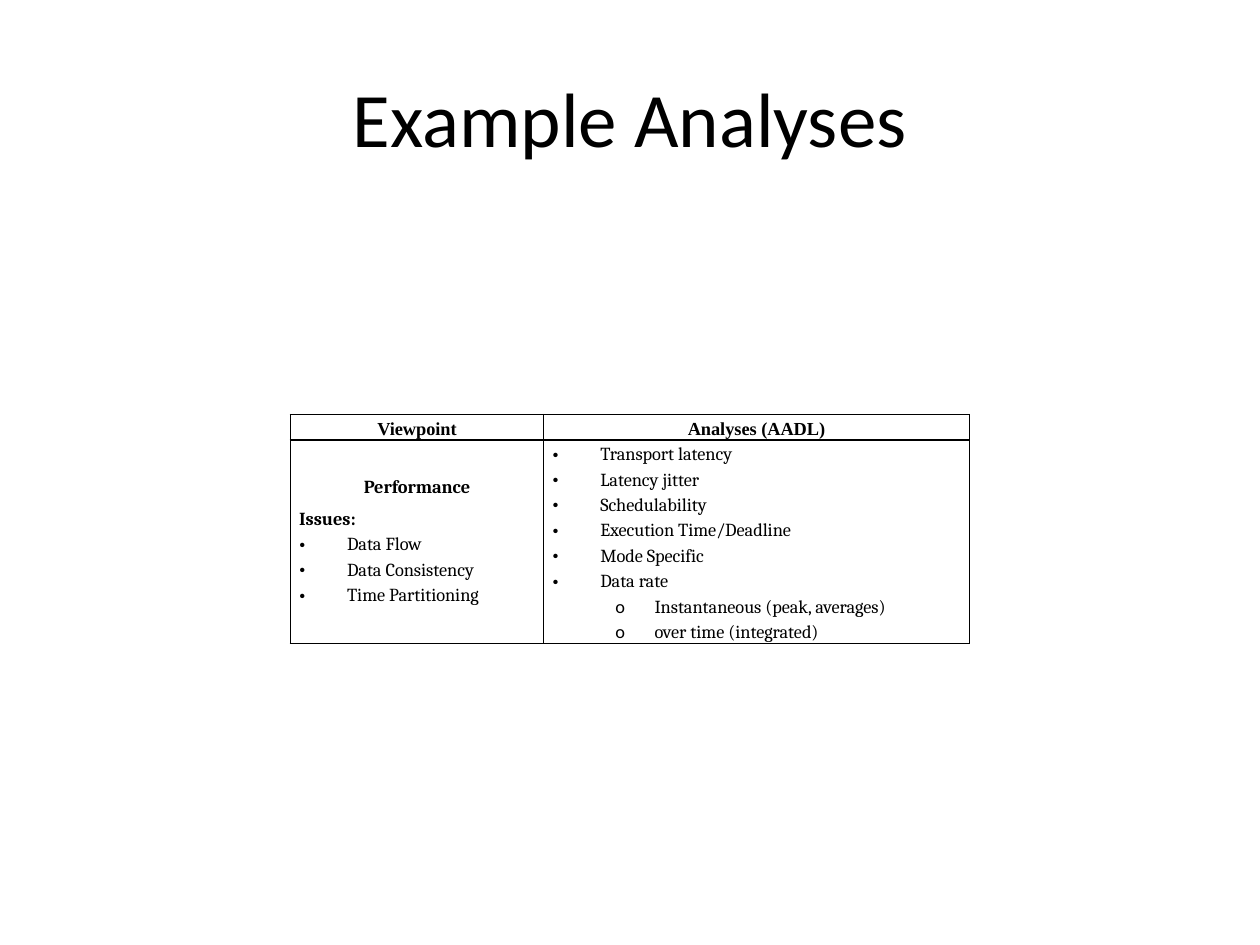
"""Build a slide with a table of example analyses for the performance viewpoint."""
from lxml.etree import SubElement
from pptx import Presentation
from pptx.dml.color import RGBColor
from pptx.enum.text import MSO_ANCHOR as Anchor, PP_ALIGN as Align
from pptx.oxml.ns import qn
from pptx.util import Inches, Pt

TITLE = "Example Analyses"
ROWS = [
    [[("header", "Viewpoint")], [("header", "Analyses (AADL)")]],
    [
        [
            ("topic", "Performance"),
            ("label", "Issues:"),
            ("item", "Data Flow"),
            ("item", "Data Consistency"),
            ("item", "Time Partitioning"),
        ],
        [
            ("item", "Transport latency"),
            ("item", "Latency jitter"),
            ("item", "Schedulability"),
            ("item", "Execution Time/Deadline"),
            ("item", "Mode Specific"),
            ("item", "Data rate"),
            ("subitem", "Instantaneous (peak, averages)"),
            ("subitem", "over time (integrated)"),
        ],
    ],
]

COLORS = {"text": "000000", "border": "000000"}
LINE = Pt(14.5)
GAP = Pt(4)
HEADING = {"space_before": GAP, "line_spacing": LINE}
PLAIN = {"space_before": Pt(0), "line_spacing": LINE}
STYLES = {
    "header": {
        "para": {**HEADING, "space_after": GAP, "alignment": Align.CENTER},
        "font": {"name": "Times New Roman", "bold": True},
    },
    "topic": {
        "para": {**HEADING, "alignment": Align.CENTER},
        "font": {"name": "Cambria", "bold": True},
    },
    "label": {"para": HEADING, "font": {"name": "Cambria", "bold": True}},
    "item": {
        "para": PLAIN,
        "font": {"name": "Cambria", "bold": False},
        "bullet": ("•", "Times New Roman", 0.38, 0.38),
    },
    "subitem": {
        "para": {**PLAIN, "level": 1},
        "font": {"name": "Cambria", "bold": False},
        "bullet": ("o", "Calibri", 0.81, 0.31),
    },
}
SLIDE = (Inches(10), Inches(7.5))
COLUMNS = [Inches(2.01), Inches(3.38)]
TABLE_TOP = Inches(3.29)
SIDE_MARGIN = Inches(0.07)


def apply(target, values):
    for name, value in values.items():
        setattr(target, name, value)


def set_font(font, size, values):
    apply(font, {"size": Pt(size), **values})
    font.color.rgb = RGBColor.from_string(COLORS["text"])


def add_bullet(para, char, font, left, hanging):
    props = para._p.get_or_add_pPr()
    props.set("marL", str(Inches(left)))
    props.set("indent", str(-Inches(hanging)))
    SubElement(props, qn("a:buFont"), typeface=font)
    SubElement(props, qn("a:buChar"), char=char)


def add_borders(cell):
    props = cell._tc.get_or_add_tcPr()
    for side in ("lnL", "lnR", "lnT", "lnB"):
        line = SubElement(props, qn(f"a:{side}"), w=str(Pt(1)))
        fill = SubElement(line, qn("a:solidFill"))
        SubElement(fill, qn("a:srgbClr"), val=COLORS["border"])


def fill_cell(cell, lines):
    starts_with_topic = lines[0][0] == "topic"
    apply(cell, {
        "margin_left": SIDE_MARGIN,
        "margin_right": SIDE_MARGIN,
        "margin_top": LINE + GAP if starts_with_topic else 0,
        "margin_bottom": 0,
        "vertical_anchor": Anchor.TOP,
    })
    add_borders(cell)
    cell.fill.background()
    frame = cell.text_frame
    for index, (kind, text) in enumerate(lines):
        para = frame.add_paragraph() if index else frame.paragraphs[0]
        style = STYLES[kind]
        apply(para, style["para"])
        if "bullet" in style:
            add_bullet(para, *style["bullet"])
        span = para.add_run()
        span.text = text
        set_font(span.font, 10.5, style["font"])


def add_title(page):
    title = page.shapes.title
    apply(title, {
        "left": Inches(0.5), "top": Inches(0.3),
        "width": Inches(9), "height": Inches(1.25),
    })
    title.text_frame.text = TITLE
    title.text_frame.vertical_anchor = Anchor.MIDDLE
    para = title.text_frame.paragraphs[0]
    para.alignment = Align.CENTER
    set_font(para.runs[0].font, 44, {"name": "Calibri"})


def add_analyses(page):
    heights = [LINE * max(len(lines) for lines in row) for row in ROWS]
    width = sum(COLUMNS)
    left = (SLIDE[0] - width) // 2
    table = page.shapes.add_table(
        len(ROWS), len(COLUMNS), left, TABLE_TOP, width, sum(heights)
    ).table
    apply(table, {"first_row": False, "horz_banding": False})
    for column, size in zip(table.columns, COLUMNS):
        column.width = size
    for row, height, contents in zip(table.rows, heights, ROWS):
        row.height = height
        for cell, lines in zip(row.cells, contents):
            fill_cell(cell, lines)


def main():
    deck = Presentation()
    deck.slide_width, deck.slide_height = SLIDE
    page = deck.slides.add_slide(deck.slide_layouts[5])
    add_title(page)
    add_analyses(page)
    deck.save("out.pptx")


if __name__ == "__main__":
    main()
